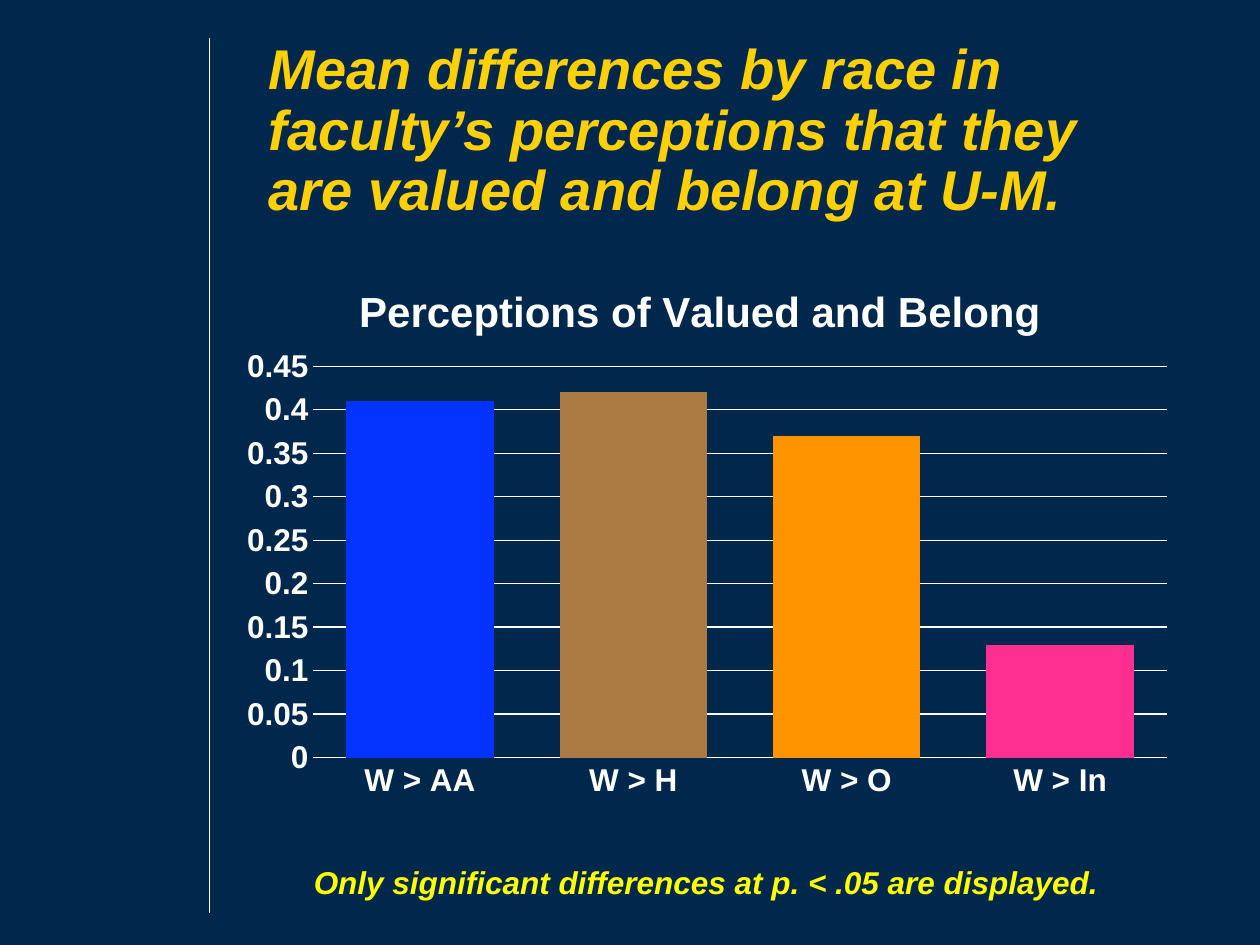
from lxml import etree
from pptx import Presentation
from pptx.chart.data import CategoryChartData
from pptx.dml.color import RGBColor
from pptx.enum.chart import XL_CHART_TYPE as ChartType, XL_TICK_MARK as TickMark
from pptx.enum.text import MSO_ANCHOR as Anchor, PP_ALIGN as Align
from pptx.oxml import parse_xml
from pptx.oxml.ns import nsdecls, qn
from pptx.util import Emu, Pt

EMU_PER_PX = 914400 / 126
WHITE = "FFFFFF"


def px(*lengths):
    return [Emu(round(length * EMU_PER_PX)) for length in lengths]


def write(frame, text, size, color, italic=False, align=Align.LEFT, spacing=None):
    frame.word_wrap = True
    paragraph = frame.paragraphs[0]
    paragraph.alignment = align
    paragraph.line_spacing = spacing
    run = paragraph.add_run()
    run.text = text
    run.font.name = "Arial"
    run.font.size = Pt(size)
    run.font.bold = True
    run.font.italic = italic
    run.font.color.rgb = RGBColor.from_string(color)


presentation = Presentation()
presentation.slide_width, presentation.slide_height = px(1260, 945)
slide = presentation.slides.add_slide(presentation.slide_layouts[5])
slide.background.fill.solid()
slide.background.fill.fore_color.rgb = RGBColor.from_string("00274C")

# Vertical rule
rule = slide.shapes.add_connector(1, *px(209, 38, 209, 913))
rule.line.color.rgb = RGBColor.from_string(WHITE)
rule.line.width = Pt(0.5)
etree.SubElement(rule._element.spPr, qn("a:effectLst"))

# Title
title = slide.shapes.title
title.left, title.top, title.width, title.height = px(256, 35, 929, 183)
title.text_frame.vertical_anchor = Anchor.TOP
write(title.text_frame,
      "Mean differences by race in faculty’s perceptions that they are valued and belong at U-M.",
      32, "FFD006", italic=True, spacing=0.9)

# Column chart
bars = [("W > AA", 0.41, "0432FF"), ("W > H", 0.42, "AB7942"),
        ("W > O", 0.37, "FF9300"), ("W > In", 0.13, "FF2F92")]
data = CategoryChartData()
data.categories = [name for name, _, _ in bars]
data.add_series("Series 1", [value for _, value, _ in bars])
chart = slide.shapes.add_chart(ChartType.COLUMN_CLUSTERED, *px(227, 249, 959, 559), data).chart
chart.has_legend = False
chart.font.name = "Arial"
chart.font.size = Pt(18)
chart.font.bold = True
chart.font.color.rgb = RGBColor.from_string(WHITE)
write(chart.chart_title.text_frame, "Perceptions of Valued and Belong", 24, WHITE, align=Align.CENTER)

plot = chart.plots[0]
plot.gap_width = 45
plot.overlap = -27
plot.vary_by_categories = False
for index, (_, _, color) in enumerate(bars):
    fill = plot.series[0].points[index].format.fill
    fill.solid()
    fill.fore_color.rgb = RGBColor.from_string(color)

value_axis, category_axis = chart.value_axis, chart.category_axis
value_axis.minimum_scale = 0
value_axis.maximum_scale = 0.45
value_axis.major_unit = 0.05
value_axis.tick_labels.number_format = "General"
value_axis.tick_labels.number_format_is_linked = False
value_axis.format.line.fill.background()
for axis in (value_axis, category_axis):
    axis.major_tick_mark = axis.minor_tick_mark = TickMark.NONE
for line in (value_axis.major_gridlines.format.line, category_axis.format.line):
    line.color.rgb = RGBColor.from_string(WHITE)
    line.width = Pt(0.75)

# Fixed places, as fractions of the chart, for the title and the plot area
chart_title = chart.chart_title._element
plot_area = chart._chartSpace.chart.plotArea
for part, target, places in (
        (chart_title, "", {"x": 0.13, "y": 0.05}),
        (plot_area, '<c:layoutTarget val="inner"/>', {"x": 0.09, "y": 0.21, "w": 0.89, "h": 0.7})):
    modes = "".join(f'<c:{key}Mode val="edge"/>' for key in "xy")
    values = "".join(f'<c:{key} val="{value}"/>' for key, value in places.items())
    layout = parse_xml(f'<c:layout {nsdecls("c")}><c:manualLayout>{target}{modes}{values}'
                       "</c:manualLayout></c:layout>")
    for old in part.findall(qn("c:layout")):
        part.remove(old)
    part.insert(1 if part is chart_title else 0, layout)

# Footnote
footnote = slide.shapes.add_textbox(*px(287, 857, 838, 50))
write(footnote.text_frame, "Only significant differences at p. < .05 are displayed.",
      18, "FFFF00", italic=True, align=Align.CENTER)

presentation.save("out.pptx")
